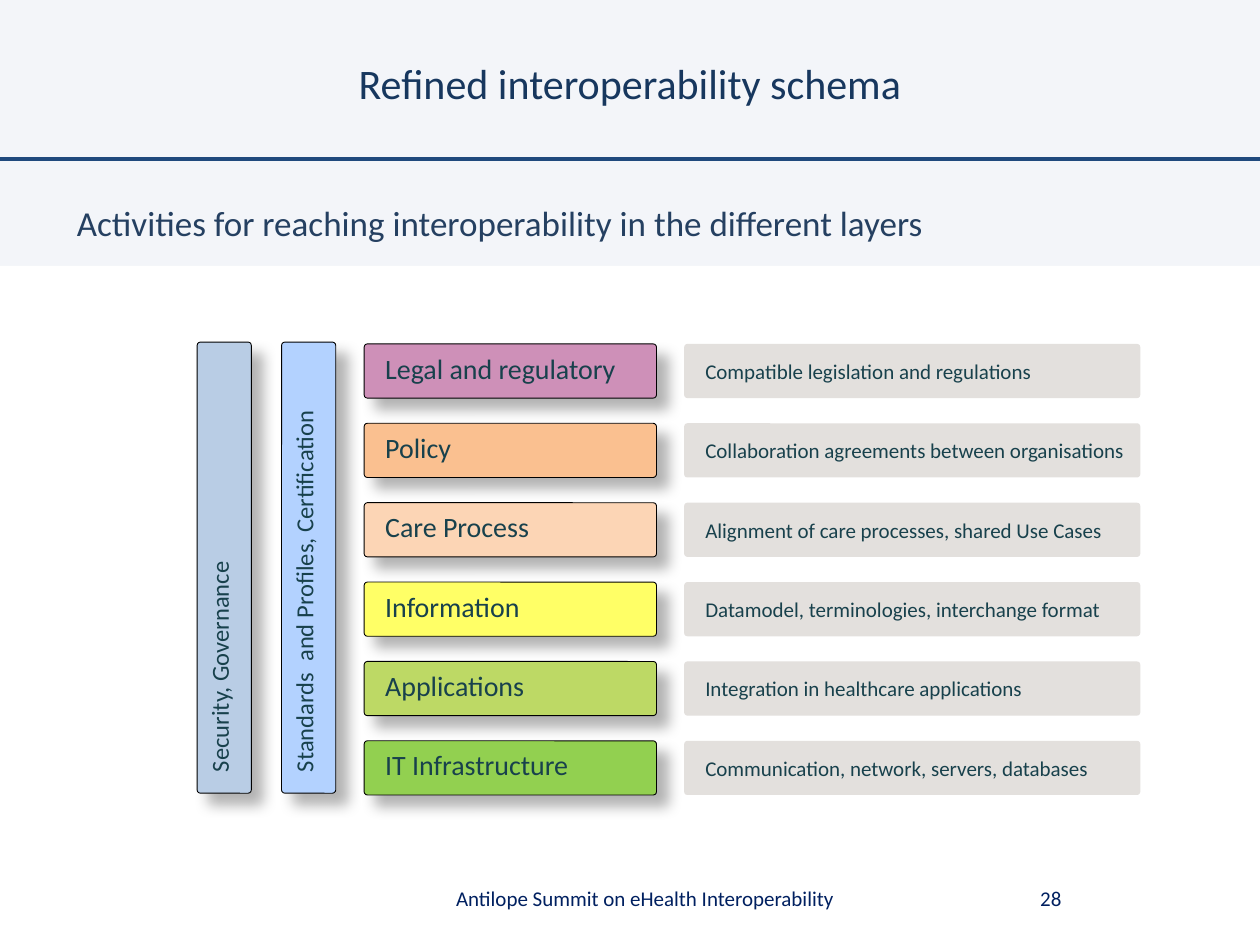
import pptx
import pptx.util
import pptx.dml.color
import pptx.enum.shapes
import pptx.enum.text
import pptx.oxml
import pptx.oxml.ns
from lxml import etree

Inches = pptx.util.Inches
Pt = pptx.util.Pt
ALIGN = pptx.enum.text.PP_ALIGN
ANCHOR = pptx.enum.text.MSO_ANCHOR
SHAPE = pptx.enum.shapes.MSO_SHAPE

FONT = "Calibri"
BOX_TEXT = "18414C"
FOOTER_TEXT = "002060"
BOX_HEIGHT = 0.43
FIRST_ROW_TOP = 2.73
ROW_STEP = 0.63

# Layer name, layer colour, activity
LAYERS = [
    ("Legal and regulatory", "CE90B8", "Compatible legislation and regulations"),
    ("Policy", "FAC090", "Collaboration agreements between organisations"),
    ("Care Process", "FCD5B5", "Alignment of care processes, shared Use Cases"),
    ("Information", "FFFF66", "Datamodel, terminologies, interchange format"),
    ("Applications", "BDD965", "Integration in healthcare applications"),
    ("IT Infrastructure", "92D050", "Communication, network, servers, databases"),
]

# Text, colour, left edge before rotation
PILLARS = [
    ("Security, Governance", "B9CDE5", -0.01),
    ("Standards  and Profiles, Certification", "B3D2FF", 0.66),
]


def color(hex_string):
    return pptx.dml.color.RGBColor.from_string(hex_string)


def place(shape, left, top, width, height):
    shape.left, shape.top = Inches(left), Inches(top)
    shape.width, shape.height = Inches(width), Inches(height)


def write(shape, text, size, hex_color, align=ALIGN.LEFT, anchor=ANCHOR.TOP):
    frame = shape.text_frame
    frame.text = text
    frame.word_wrap = True
    frame.auto_size = pptx.enum.text.MSO_AUTO_SIZE.NONE
    frame.vertical_anchor = anchor
    paragraph = frame.paragraphs[0]
    paragraph.alignment = align
    paragraph.space_before = Pt(0)
    font = paragraph.runs[0].font
    font.name = FONT
    font.size = Pt(size)
    font.color.rgb = color(hex_color)


def add_soft_shadow(shape):
    effects = shape.element.spPr.find(pptx.oxml.ns.qn("a:effectLst"))
    effects.append(pptx.oxml.parse_xml(
        f'<a:outerShdw {pptx.oxml.ns.nsdecls("a")} blurRad="{Pt(8)}" dist="{Pt(9)}" '
        'dir="2700000" algn="tl" rotWithShape="0">'
        '<a:srgbClr val="000000"><a:alpha val="30000"/></a:srgbClr></a:outerShdw>'))


def add_panel(slide, kind, left, top, width, height, fill):
    shape = slide.shapes.add_shape(
        kind, Inches(left), Inches(top), Inches(width), Inches(height))
    shape.shadow.inherit = False
    shape.fill.solid()
    shape.fill.fore_color.rgb = color(fill)
    shape.line.fill.background()
    return shape


def add_box(slide, left, top, width, fill, text, size, anchor=ANCHOR.TOP):
    box = add_panel(slide, SHAPE.ROUNDED_RECTANGLE, left, top, width, BOX_HEIGHT, fill)
    box.adjustments[0] = 0.06
    write(box, text, size, BOX_TEXT, anchor=anchor)
    box.text_frame.margin_left = Inches(0.16)
    return box


def add_raised_box(slide, left, top, width, fill, text, size):
    box = add_box(slide, left, top, width, fill, text, size)
    box.line.color.rgb = color("000000")
    box.line.width = Pt(0.5)
    add_soft_shadow(box)
    return box


def add_rule(slide, top):
    rule = slide.shapes.add_connector(
        pptx.enum.shapes.MSO_CONNECTOR.STRAIGHT,
        Inches(0), Inches(top), Inches(10), Inches(top))
    rule.line.color.rgb = color("1F497D")
    rule.line.width = Pt(2.25)
    etree.SubElement(rule.element.spPr, pptx.oxml.ns.qn("a:effectLst"))


def add_footer(slide, left, width, text):
    footer = slide.shapes.add_textbox(
        Inches(left), Inches(6.98), Inches(width), Inches(0.4))
    write(footer, text, 12, FOOTER_TEXT, ALIGN.CENTER)


def add_headings(slide):
    title = slide.shapes.title
    place(title, 2.36, 0.26, 5.28, 0.79)
    write(title, "Refined interoperability schema", 24, "17375E",
          ALIGN.CENTER, ANCHOR.MIDDLE)

    subtitle = slide.placeholders[1]
    place(subtitle, 0.51, 1.55, 8.5, 0.47)
    write(subtitle, "Activities for reaching interoperability in the different layers",
          20, "254061")
    # Plain line without a bullet
    properties = subtitle.text_frame.paragraphs[0]._p.get_or_add_pPr()
    properties.set("marL", "0")
    properties.set("indent", "0")
    etree.SubElement(properties, pptx.oxml.ns.qn("a:buNone"))


def main():
    presentation = pptx.Presentation()
    presentation.slide_width = Inches(10)
    presentation.slide_height = Inches(7.5)
    slide = presentation.slides.add_slide(presentation.slide_layouts[1])
    slide.background.fill.solid()
    slide.background.fill.fore_color.rgb = color("F3F5F9")

    # Header and white content area
    add_headings(slide)
    add_rule(slide, 1.26)
    add_panel(slide, SHAPE.RECTANGLE, 0, 2.11, 10, 5.39, "FFFFFF")

    # Pillars that span all layers
    for text, fill, left in PILLARS:
        pillar = add_raised_box(slide, left, 4.29, 3.58, fill, text, 14)
        pillar.rotation = 270

    # Layers with their activities
    for row, (layer, fill, activity) in enumerate(LAYERS):
        top = FIRST_ROW_TOP + row * ROW_STEP
        add_raised_box(slide, 2.89, top, 2.32, fill, layer, 16)
        add_box(slide, 5.43, top, 3.62, "E3E0DD", activity, 12, ANCHOR.MIDDLE)

    # Footer
    add_footer(slide, 2.64, 4.96, "Antilope Summit on eHealth Interoperability")
    add_footer(slide, 7.83, 1.02, "28")

    presentation.save("out.pptx")


if __name__ == "__main__":
    main()
